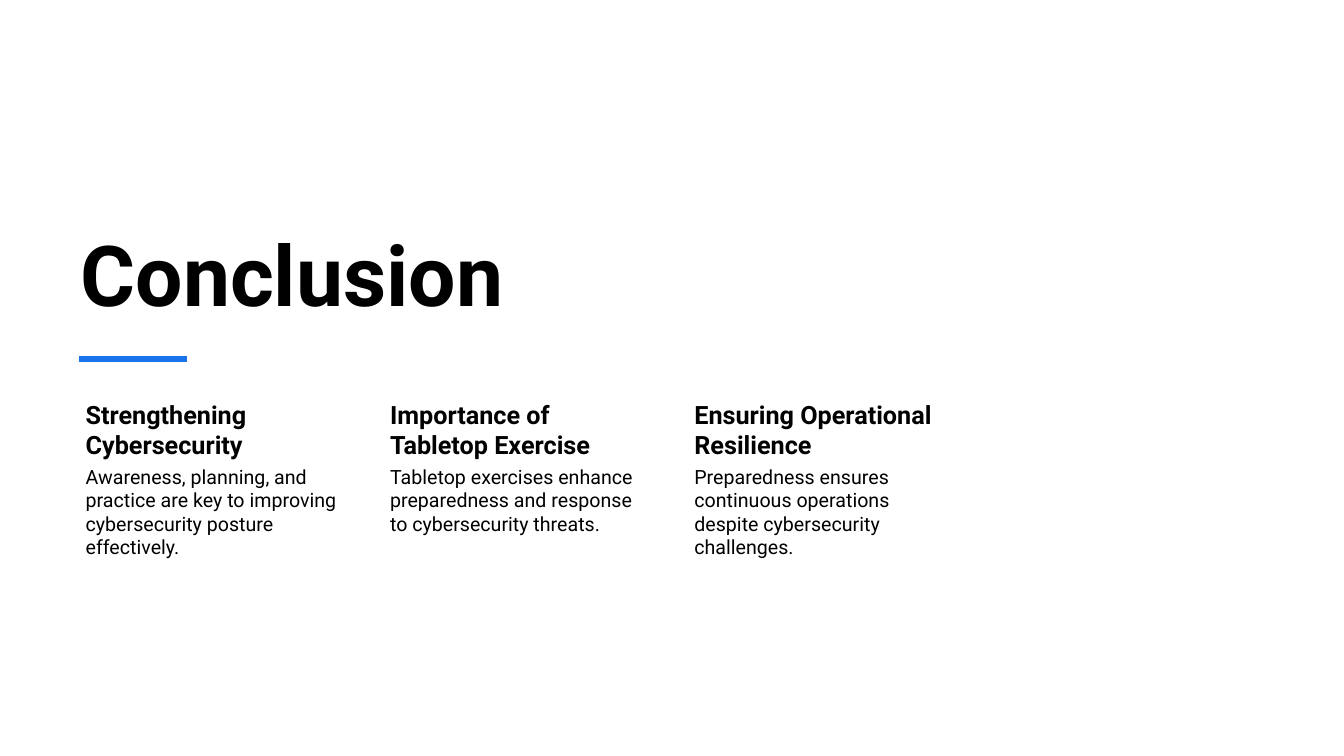
import pptx
import pptx.dml.color
import pptx.enum.shapes
import pptx.enum.text
import pptx.oxml.ns
import pptx.util
from lxml import etree
from pptx.util import Cm

BLACK = pptx.dml.color.RGBColor(0x00, 0x00, 0x00)
WHITE = pptx.dml.color.RGBColor(0xFF, 0xFF, 0xFF)
BLUE = pptx.dml.color.RGBColor(0x19, 0x73, 0xEB)

LEFT = 1.78
COLUMN_STEP = 7.67
COLUMN_WIDTH = 6.99

TAKEAWAYS = [
    ("Strengthening Cybersecurity",
     "Awareness, planning, and practice are key to improving "
     "cybersecurity posture effectively."),
    ("Importance of Tabletop Exercise",
     "Tabletop exercises enhance preparedness and response to "
     "cybersecurity threats."),
    ("Ensuring Operational Resilience",
     "Preparedness ensures continuous operations despite "
     "cybersecurity challenges."),
]


class SlideBuilder:
    """Holds the text style and the current slide; lengths are in cm."""

    font_name = "Roboto"

    def __init__(self, deck):
        self.slide = deck.slides.add_slide(deck.slide_layouts[5])
        self.slide.background.fill.solid()
        self.slide.background.fill.fore_color.rgb = WHITE

    def add_words(self, frame, text, size, bold):
        frame.word_wrap = True
        frame.auto_size = pptx.enum.text.MSO_AUTO_SIZE.NONE
        paragraph = frame.paragraphs[0]
        paragraph.alignment = pptx.enum.text.PP_ALIGN.LEFT
        run = paragraph.add_run()
        run.text = text
        run.font.name = self.font_name
        run.font.size = pptx.util.Pt(size)
        run.font.bold = bold
        run.font.color.rgb = BLACK

    def title(self, text, left, top, width, height):
        heading = self.slide.shapes.title
        heading.left, heading.top = Cm(left), Cm(top)
        heading.width, heading.height = Cm(width), Cm(height)
        heading.text_frame.vertical_anchor = pptx.enum.text.MSO_ANCHOR.BOTTOM
        self.add_words(heading.text_frame, text, 60, True)

    def group(self):
        return self.slide.shapes.add_group_shape()

    def text(self, parent, text, left, top, height, size, inset, bold=False):
        box = parent.shapes.add_textbox(
            Cm(left), Cm(top), Cm(COLUMN_WIDTH), Cm(height))
        frame = box.text_frame
        frame.margin_left = Cm(0.38)
        frame.margin_top = frame.margin_right = frame.margin_bottom = Cm(inset)
        frame.vertical_anchor = pptx.enum.text.MSO_ANCHOR.TOP
        self.add_words(frame, text, size, bold)

    def rule(self, left, right, y):
        accent = self.slide.shapes.add_connector(
            pptx.enum.shapes.MSO_CONNECTOR.STRAIGHT,
            Cm(left), Cm(y), Cm(right), Cm(y))
        accent.line.color.rgb = BLUE
        accent.line.width = pptx.util.Pt(4.5)
        etree.SubElement(accent._element.spPr,
                         pptx.oxml.ns.qn("a:effectLst"))


def main():
    deck = pptx.Presentation()
    deck.slide_width, deck.slide_height = Cm(33.87), Cm(19.05)
    conclusion = SlideBuilder(deck)

    # Title
    conclusion.title("Conclusion", LEFT, 4.37, 22.68, 3.91)

    # Three takeaway columns
    columns = conclusion.group()
    for index, (topic, detail) in enumerate(TAKEAWAYS):
        left = LEFT + index * COLUMN_STEP
        conclusion.text(columns, topic, left, 9.98, 1.68, 18, 0.08, bold=True)
        conclusion.text(columns, detail, left, 11.66, 5.28, 14, 0.05)

    # Accent line under the title
    conclusion.rule(1.99, 4.71, 9.04)

    deck.save("out.pptx")


if __name__ == "__main__":
    main()
